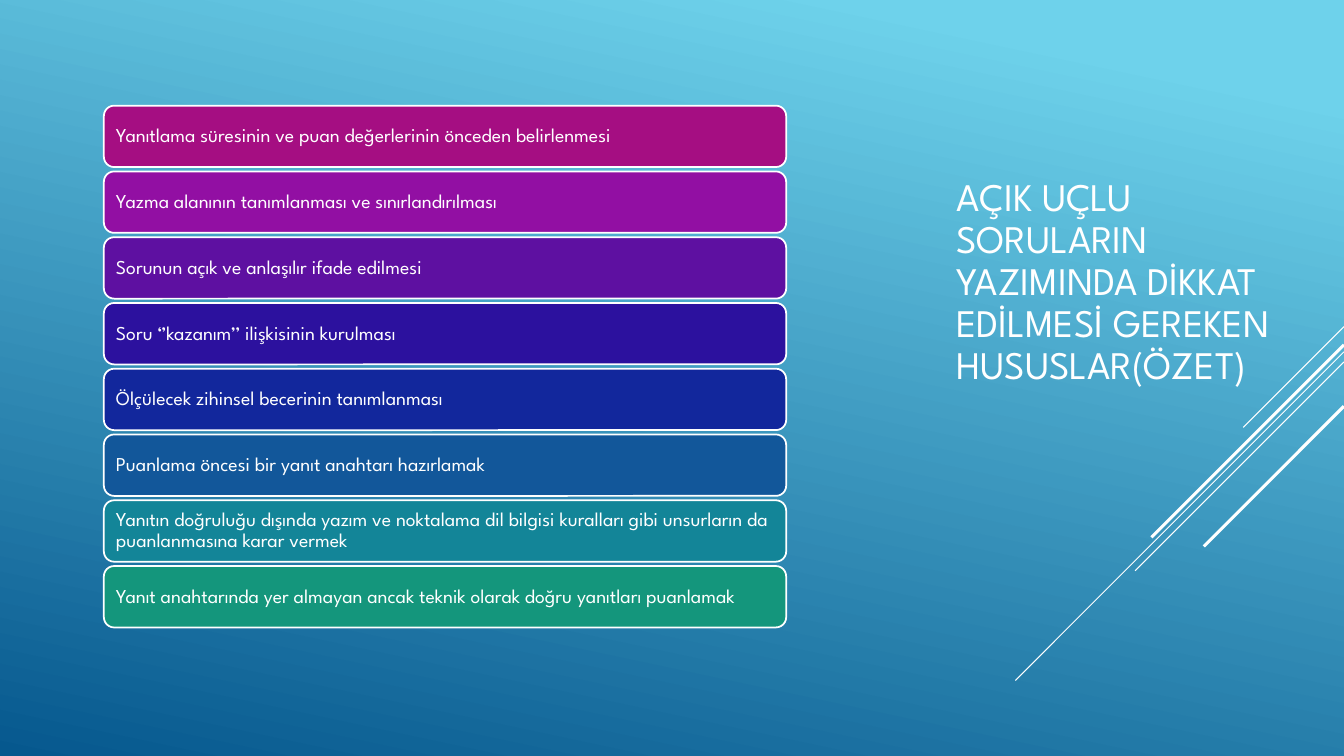
import pptx
import pptx.util
import pptx.dml.color
import pptx.enum.shapes
import pptx.enum.text
import pptx.oxml.ns
import lxml.etree

Pt = pptx.util.Pt

FONT = "League Spartan"
COLORS = {
    "white": "FFFFFF",
    "sky": "6ED2EB",
    "deep": "06588E",
    "magenta": "A50E82",
    "purple": "920FA3",
    "violet": "5E10A1",
    "indigo": "2C119E",
    "blue": "12279C",
    "steel": "12579A",
    "teal": "138598",
    "green": "14967C",
}
TITLE = "AÇIK UÇLU SORULARIN YAZIMINDA DİKKAT EDİLMESİ GEREKEN HUSUSLAR(ÖZET)"
RULES = [
    ("magenta", "Yanıtlama süresinin ve puan değerlerinin önceden belirlenmesi"),
    ("purple", "Yazma alanının tanımlanması ve sınırlandırılması"),
    ("violet", "Sorunun açık ve anlaşılır ifade edilmesi"),
    ("indigo", "Soru ‘’kazanım’’ ilişkisinin kurulması"),
    ("blue", "Ölçülecek zihinsel becerinin tanımlanması"),
    ("steel", "Puanlama öncesi bir yanıt anahtarı hazırlamak"),
    ("teal", "Yanıtın doğruluğu dışında yazım ve noktalama dil bilgisi kuralları "
             "gibi unsurların da puanlanmasına karar vermek"),
    ("green", "Yanıt anahtarında yer almayan ancak teknik olarak doğru yanıtları puanlamak"),
]
DIAGONALS = [
    (0, 72, 0.75),
    (18, 234.7, 0.75),
    (25.2, 149.2, 0.75),
    (13, 137.5, 2.25),
    (56.9, 100.1, 2.25),
]


def color(name):
    return pptx.dml.color.RGBColor.from_string(COLORS[name])


def apply(target, values):
    for name, value in values.items():
        setattr(target, name, value)


def write_text(shape, text, size, frame_format):
    frame = shape.text_frame
    frame.text = text
    apply(frame, {
        "word_wrap": True,
        "auto_size": pptx.enum.text.MSO_AUTO_SIZE.NONE,
        "vertical_anchor": pptx.enum.text.MSO_ANCHOR.MIDDLE,
        **frame_format,
    })
    paragraph = frame.paragraphs[0]
    apply(paragraph, {"alignment": pptx.enum.text.PP_ALIGN.LEFT, "line_spacing": 0.9})
    font = paragraph.runs[0].font
    apply(font, {"name": FONT, "size": Pt(size), "bold": False})
    font.color.rgb = color("white")


def paint_background(slide):
    fill = slide.background.fill
    fill.gradient()
    fill.gradient_angle = 258
    for stop, (position, name) in zip(fill.gradient_stops, [(0.1, "sky"), (1, "deep")]):
        stop.position = position
        stop.color.rgb = color(name)


def add_diagonals(slide, right, top):
    for offset, length, weight in DIAGONALS:
        start = top + offset
        connector = slide.shapes.add_connector(
            pptx.enum.shapes.MSO_CONNECTOR.STRAIGHT,
            Pt(right), Pt(start), Pt(right - length), Pt(start + length))
        connector.line.width = Pt(weight)
        connector.line.color.rgb = color("white")
        properties = connector._element.spPr
        lxml.etree.SubElement(properties, pptx.oxml.ns.qn("a:effectLst"))


def place_title(slide, left, top, width, height):
    title = slide.shapes.title
    apply(title, {"left": Pt(left), "top": Pt(top), "width": Pt(width), "height": Pt(height)})
    write_text(title, TITLE, 27.9, {"margin_left": Pt(7.2), "margin_right": Pt(7.2)})


def add_rules(slide, left, top, width, height, gap):
    bar_height = (height - gap * (len(RULES) - 1)) / len(RULES)
    margins = {"margin_" + side: Pt(6.5) for side in ("left", "top", "right", "bottom")}
    for index, (fill_name, text) in enumerate(RULES):
        bar = slide.shapes.add_shape(
            pptx.enum.shapes.MSO_SHAPE.ROUNDED_RECTANGLE,
            Pt(left), Pt(top + index * (bar_height + gap)), Pt(width), Pt(bar_height))
        bar.shadow.inherit = False
        bar.fill.solid()
        bar.fill.fore_color.rgb = color(fill_name)
        bar.line.color.rgb = color("white")
        bar.line.width = Pt(1.25)
        write_text(bar, text, 14, margins)


def main():
    presentation = pptx.Presentation()
    apply(presentation, {"slide_width": Pt(960), "slide_height": Pt(540)})
    slide = presentation.slides.add_slide(presentation.slide_layouts[5])
    paint_background(slide)
    add_diagonals(slide, 960, 233.3)
    place_title(slide, 676, 74.2, 240, 255.6)
    add_rules(slide, 74.2, 75.5, 487.4, 372.7, 3.1)
    presentation.save("out.pptx")


if __name__ == "__main__":
    main()
